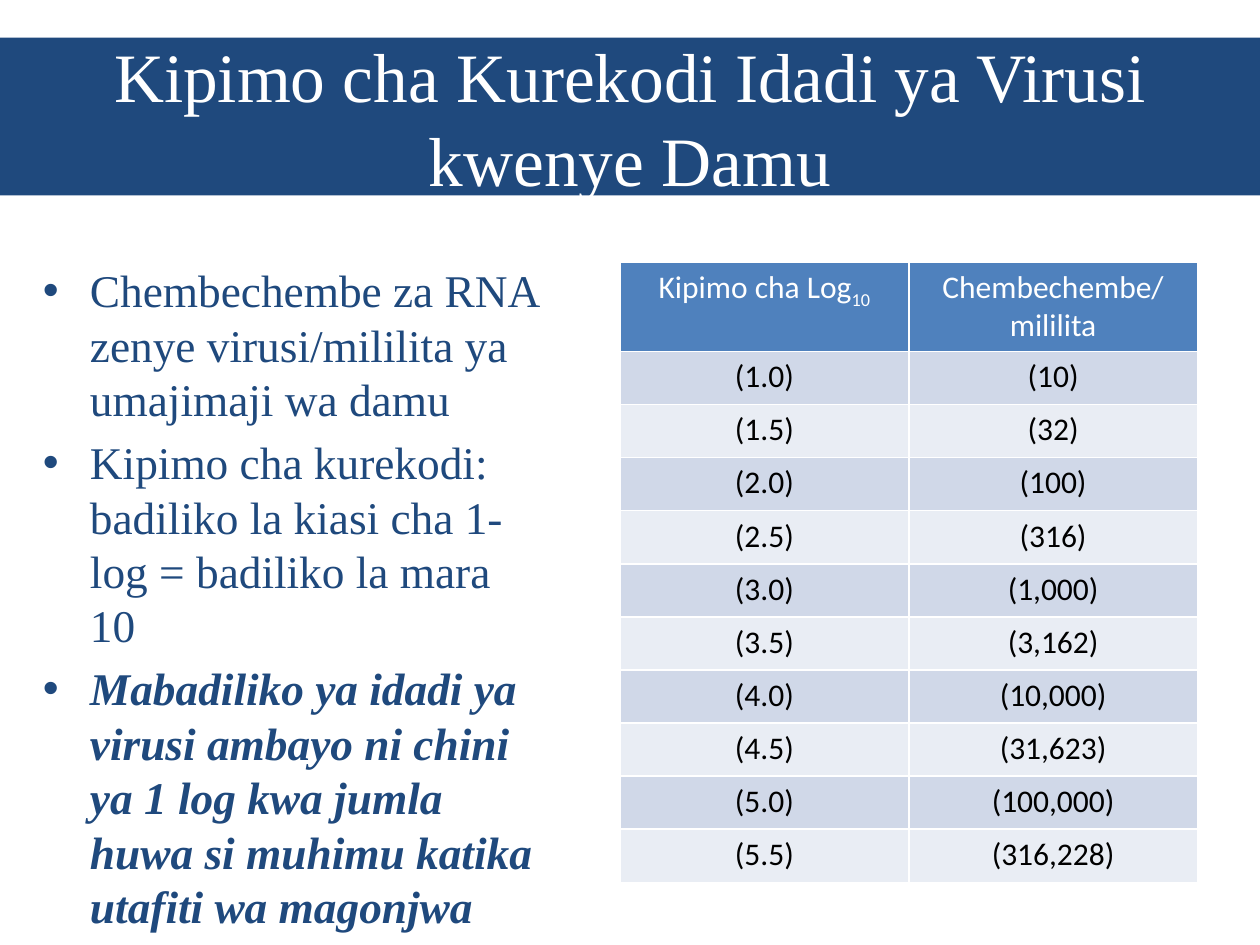
from pptx import Presentation
from pptx.dml.color import RGBColor
from pptx.enum.text import MSO_ANCHOR, MSO_AUTO_SIZE, PP_ALIGN
from pptx.oxml import parse_xml
from pptx.oxml.ns import nsdecls
from pptx.util import Cm, Pt

CENTER, MIDDLE, TOP = PP_ALIGN.CENTER, MSO_ANCHOR.MIDDLE, MSO_ANCHOR.TOP
FIXED = MSO_AUTO_SIZE.NONE
SERIF, SANS = "Times New Roman", "Calibri"
NAVY, BLUE, WHITE, BLACK = "1F497D", "4F81BD", "FFFFFF", "000000"
BANDS = "D0D8E8", "E9EDF4"

TITLE = "Kipimo cha Kurekodi Idadi ya Virusi kwenye Damu"
POINTS = [
    ("Chembechembe za RNA zenye virusi/mililita ya umajimaji wa damu", False),
    ("Kipimo cha kurekodi: badiliko la kiasi cha 1-log = badiliko la mara 10", False),
    ("Mabadiliko ya idadi ya virusi ambayo ni chini ya 1 log kwa jumla "
     "huwa si muhimu katika utafiti wa magonjwa", True),
]
HEAD = [("Kipimo cha Log", "10"), ("Chembechembe/mililita", "")]
ROWS = [
    ("(1.0)", "(10)"), ("(1.5)", "(32)"), ("(2.0)", "(100)"),
    ("(2.5)", "(316)"), ("(3.0)", "(1,000)"), ("(3.5)", "(3,162)"),
    ("(4.0)", "(10,000)"), ("(4.5)", "(31,623)"), ("(5.0)", "(100,000)"),
    ("(5.5)", "(316,228)"),
]
COL, ROW = 5.82, 1.07


def paint(fill, color):
    fill.solid()
    fill.fore_color.rgb = RGBColor.from_string(color)


def place(shape, *box):
    shape.left, shape.top, shape.width, shape.height = map(Cm, box)


def add_run(para, text, size, font, color):
    run = para.add_run()
    run.text = text
    run.font.size, run.font.name = Pt(size), font
    run.font.color.rgb = RGBColor.from_string(color)
    return run


def add_title(slide):
    title = slide.shapes.title
    place(title, 0, 0.76, 25.4, 3.18)
    paint(title.fill, NAVY)
    frame = title.text_frame
    frame.auto_size, frame.vertical_anchor = FIXED, MIDDLE
    para = frame.paragraphs[0]
    para.alignment, para.line_spacing = CENTER, Pt(48)
    add_run(para, TITLE, 39.6, SERIF, WHITE)


def add_list(slide):
    body = slide.placeholders[1]
    place(body, 0.61, 5.16, 10.62, 13.03)
    frame = body.text_frame
    frame.auto_size, frame.vertical_anchor = FIXED, TOP
    for i, (text, strong) in enumerate(POINTS):
        para = frame.add_paragraph() if i else frame.paragraphs[0]
        para.line_spacing, para.space_before = Pt(31.1), Pt(5)
        props = para._p.get_or_add_pPr()
        props.set("marL", str(Cm(0.95)))
        props.set("indent", str(-Cm(0.95)))
        run = add_run(para, text, 25.9, SERIF, NAVY)
        if strong:
            run.font.bold = run.font.italic = True


def add_edges(cell):
    props = cell._tc.get_or_add_tcPr()
    for i, side in enumerate("LRTB"):
        props.insert(i, parse_xml(
            f'<a:ln{side} {nsdecls("a")} w="{Pt(1)}"><a:solidFill>'
            f'<a:srgbClr val="{WHITE}"/></a:solidFill></a:ln{side}>'))


def fill_cell(cell, text, sub, ink, back):
    paint(cell.fill, back)
    add_edges(cell)
    para = cell.text_frame.paragraphs[0]
    para.alignment = CENTER
    add_run(para, text, 18, SANS, ink)
    if sub:
        run = add_run(para, sub, 18, SANS, ink)
        run.font._element.set("baseline", "-25000")


def add_grid(slide):
    count = len(ROWS) + 1
    grid = slide.shapes.add_table(
        count, 2, Cm(12.5), Cm(5.28), Cm(2 * COL), Cm(count * ROW)).table
    for col in grid.columns:
        col.width = Cm(COL)
    for row in grid.rows:
        row.height = Cm(ROW)
    for c, (text, sub) in enumerate(HEAD):
        fill_cell(grid.cell(0, c), text, sub, WHITE, BLUE)
    for r, row in enumerate(ROWS):
        for c, text in enumerate(row):
            fill_cell(grid.cell(r + 1, c), text, "", BLACK, BANDS[r % 2])


def main():
    deck = Presentation()
    deck.slide_width, deck.slide_height = Cm(25.4), Cm(19.05)
    slide = deck.slides.add_slide(deck.slide_layouts[1])
    add_title(slide)
    add_grid(slide)
    add_list(slide)
    deck.save("out.pptx")


if __name__ == "__main__":
    main()
